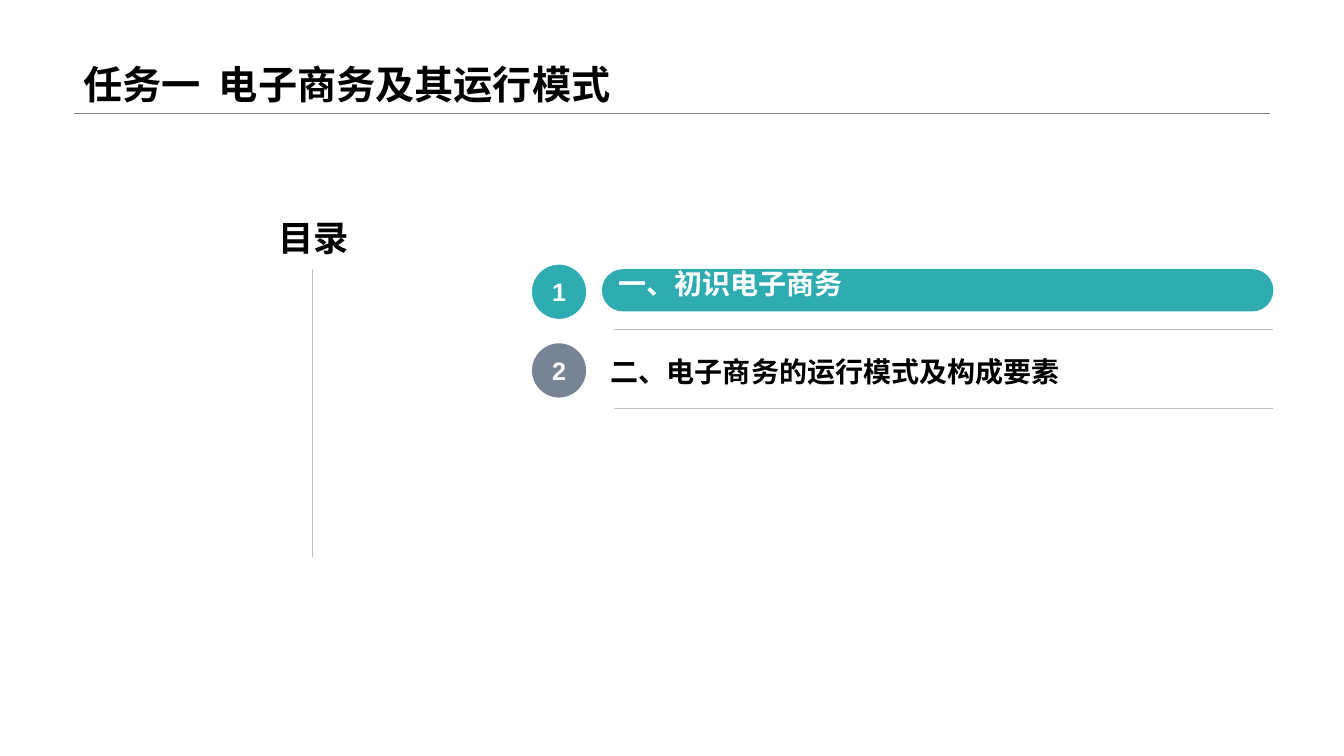
import pptx
import pptx.util
import pptx.dml.color
import pptx.enum.lang
import pptx.enum.shapes
import pptx.enum.text
import pptx.oxml
import pptx.oxml.ns

Inches = pptx.util.Inches
Pt = pptx.util.Pt
RGBColor = pptx.dml.color.RGBColor
SHAPE = pptx.enum.shapes.MSO_SHAPE
ANCHOR = pptx.enum.text.MSO_ANCHOR
ALIGN = pptx.enum.text.PP_ALIGN

TEAL = RGBColor(0x2F, 0xAC, 0xB2)
SLATE = RGBColor(0x77, 0x84, 0x95)
RULE_GRAY = RGBColor(0xBF, 0xBF, 0xBF)
TITLE_GRAY = RGBColor(0x80, 0x80, 0x80)
WHITE = RGBColor(0xFF, 0xFF, 0xFF)
BLACK = RGBColor(0, 0, 0)


def apply_format(target, values):
    for key, value in values.items():
        setattr(target, key, value)


class AgendaSlide:
    font_name = "Arial"
    rule_width = Pt(0.25)

    def __init__(self, deck):
        self.slide = deck.slides.add_slide(deck.slide_layouts[5])

    def set_text(self, shape, text, size, color, align=ALIGN.LEFT,
                 anchor=ANCHOR.BOTTOM, spacing=1.0):
        frame = shape.text_frame
        frame.text = text
        apply_format(frame, {
            "word_wrap": True,
            "auto_size": pptx.enum.text.MSO_AUTO_SIZE.NONE,
            "vertical_anchor": anchor,
        })
        paragraph = frame.paragraphs[0]
        apply_format(paragraph, {"alignment": align, "line_spacing": spacing})
        font = paragraph.runs[0].font
        apply_format(font, {
            "name": self.font_name,
            "size": Pt(size),
            "bold": True,
            "language_id": pptx.enum.lang.MSO_LANGUAGE_ID.SIMPLIFIED_CHINESE,
        })
        font.color.rgb = color

    def title(self, text, box):
        heading = self.slide.shapes.title
        edges = (Inches(value) for value in box)
        apply_format(heading, dict(zip(("left", "top", "width", "height"), edges)))
        self.set_text(heading, text, 28, BLACK, spacing=0.9)

    def rule(self, start, end, color=RULE_GRAY):
        line = self.slide.shapes.add_connector(
            pptx.enum.shapes.MSO_CONNECTOR.STRAIGHT,
            *(Inches(value) for value in start + end))
        line.line.color.rgb = color
        line.line.width = self.rule_width
        line._element.spPr.append(pptx.oxml.parse_xml(
            "<a:effectLst %s/>" % pptx.oxml.ns.nsdecls("a")))

    def block(self, kind, box, fill, text, size, color, outline=None, **layout):
        shape = self.slide.shapes.add_shape(
            kind, *(Inches(value) for value in box))
        shape.shadow.inherit = False
        shape.fill.solid()
        shape.fill.fore_color.rgb = fill
        if outline is None:
            shape.line.fill.background()
        else:
            shape.line.color.rgb = outline
            shape.line.width = Pt(2.25)
        if kind == SHAPE.ROUNDED_RECTANGLE:
            shape.adjustments[0] = 0.5
        self.set_text(shape, text, size, color, **layout)

    def label(self, box, text, size, color):
        caption = self.slide.shapes.add_textbox(
            *(Inches(value) for value in box))
        self.set_text(caption, text, size, color)


def main():
    deck = pptx.Presentation()
    deck.slide_width = Inches(13.33)
    deck.slide_height = Inches(7.5)
    agenda = AgendaSlide(deck)

    agenda.title("任务一  电子商务及其运行模式", (0.73, 0, 11.87, 1.12))
    agenda.rule((0.73, 1.12), (12.6, 1.12), TITLE_GRAY)

    row_pitch = 0.78
    for index, badge_color in enumerate((TEAL, SLATE)):
        offset = index * row_pitch
        agenda.block(SHAPE.OVAL, (5.26, 2.61 + offset, 0.57, 0.57),
                     badge_color, str(index + 1), 18, WHITE, outline=WHITE,
                     align=ALIGN.CENTER, anchor=ANCHOR.MIDDLE)
        agenda.rule((6.09, 3.27 + offset), (12.63, 3.27 + offset))

    agenda.rule((3.1, 2.15), (3.1, 5.53))
    agenda.block(SHAPE.RECTANGLE, (1.65, 2.1, 1.91, 0.57), WHITE, "目录",
                 25.2, BLACK, align=ALIGN.RIGHT, anchor=ANCHOR.TOP)
    agenda.block(SHAPE.ROUNDED_RECTANGLE, (5.97, 2.67, 6.66, 0.42), TEAL,
                 "一、初识电子商务", 20, WHITE, spacing=1.1)
    agenda.label((5.96, 3.48, 6.66, 0.42),
                 "二、电子商务的运行模式及构成要素", 20, BLACK)

    deck.save("out.pptx")


if __name__ == "__main__":
    main()
